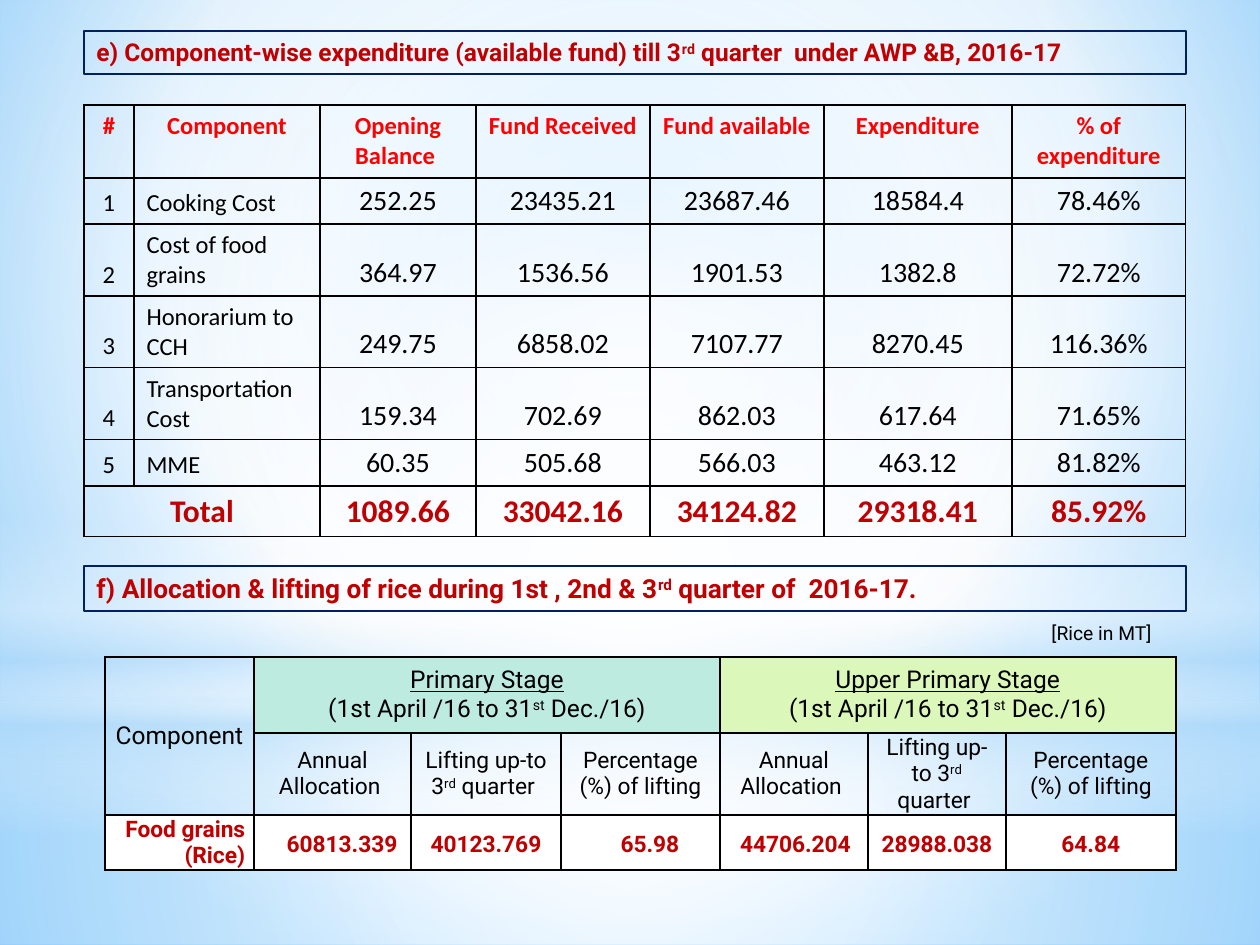
"""Build the slide on component-wise expenditure and rice lifting, 2016-17."""
import lxml.etree
import pptx
import pptx.dml.color
import pptx.enum.shapes
import pptx.enum.text
import pptx.oxml
import pptx.oxml.ns
import pptx.util

SHAPE = pptx.enum.shapes.MSO_SHAPE
ALIGN = pptx.enum.text.PP_ALIGN
ANCHOR = pptx.enum.text.MSO_ANCHOR
AUTO_SIZE = pptx.enum.text.MSO_AUTO_SIZE
COLORS = {
    "black": "000000", "white": "FFFFFF", "red": "FF0000", "dark_red": "C00000",
    "navy": "002060", "mint": "BEEBDF", "lime": "DCF7BA",
    "sky": "9ED5FF", "azure": "5BB9FF", "haze": "B4DCFA",
}
CENTER = (50, 50, 50, 50)


def px(value):
    return pptx.util.Emu(round(value * 914400 / 126))


def rgb(name):
    return pptx.dml.color.RGBColor.from_string(COLORS[name])


def gradient(stops, focus=None):
    namespace = pptx.oxml.ns.nsdecls("a")
    stop_xml = "".join(
        f'<a:gs pos="{position * 1000}"><a:srgbClr val="{COLORS[color]}">'
        f'<a:alpha val="{alpha * 1000}"/></a:srgbClr></a:gs>'
        for position, color, alpha in stops)
    if focus:
        sides = " ".join(f'{side}="{part * 1000}"' for side, part in zip("ltrb", focus))
        direction = f'<a:path path="circle"><a:fillToRect {sides}/></a:path>'
    else:
        direction = '<a:lin ang="5400000" scaled="0"/>'
    return pptx.oxml.parse_xml(
        f'<a:gradFill {namespace} rotWithShape="1"><a:gsLst>{stop_xml}</a:gsLst>{direction}</a:gradFill>')


class SlideBuilder:
    """Hold the style and the current slide, and draw each kind of element."""

    def __init__(self, slide, font="Roboto"):
        self.slide = slide
        self.font = font

    def swap_fill(self, parent, fill):
        solid = parent.find(pptx.oxml.ns.qn("a:solidFill"))
        parent.replace(solid, fill)

    def background(self, stops, focus):
        self.slide.background.fill.solid()
        properties = self.slide.element.find(".//" + pptx.oxml.ns.qn("p:bgPr"))
        self.swap_fill(properties, gradient(stops, focus))

    def glow(self, kind, top, height, stops, focus=None):
        shape = self.slide.shapes.add_shape(kind, px(0), px(top), px(1260), px(height))
        shape.shadow.inherit = False
        shape.line.fill.background()
        shape.fill.solid()
        self.swap_fill(shape.element.spPr, gradient(stops, focus))

    def add_text(self, frame, text, size, color="black", bold=False, align=ALIGN.LEFT,
                 font=None, indent=(0, 0), spacing=None):
        for index, content in enumerate(text.split("\n")):
            paragraph = frame.add_paragraph() if index else frame.paragraphs[0]
            paragraph.alignment = align
            if spacing:
                paragraph.line_spacing = spacing
            if any(indent):
                properties = paragraph._p.get_or_add_pPr()
                properties.set("marL", str(px(indent[0])))
                properties.set("indent", str(px(indent[1])))
            paragraph.font.name = font or self.font
            paragraph.font.size = pptx.util.Pt(size)
            paragraph.font.bold = bold
            paragraph.font.color.rgb = rgb(color)
            for number, line in enumerate(content.split("\v")):
                if number:
                    paragraph.add_line_break()
                self.add_runs(paragraph, line)

    def add_runs(self, paragraph, line):
        for index, piece in enumerate(line.strip("_").split("^")):
            run = paragraph.add_run()
            run.text = piece
            if line.startswith("_"):
                run.font.underline = True
            if index % 2:
                run._r.get_or_add_rPr().set("baseline", "30000")

    def heading(self, text, top, height, size):
        shape = self.slide.shapes.add_shape(SHAPE.RECTANGLE, px(84), px(top), px(1102), px(height))
        shape.shadow.inherit = False
        shape.fill.background()
        shape.line.color.rgb = rgb("navy")
        shape.line.width = pptx.util.Pt(0.75)
        frame = shape.text_frame
        frame.word_wrap = True
        frame.auto_size = AUTO_SIZE.SHAPE_TO_FIT_TEXT
        frame.vertical_anchor = ANCHOR.TOP
        self.add_text(frame, text, size, "dark_red", True, indent=(48, -48))

    def label(self, text, left, top, width, height, size):
        frame = self.slide.shapes.add_textbox(px(left), px(top), px(width), px(height)).text_frame
        frame.word_wrap = False
        frame.auto_size = AUTO_SIZE.SHAPE_TO_FIT_TEXT
        self.add_text(frame, text, size)

    def table(self, left, top, columns, rows):
        table = self.slide.shapes.add_table(
            len(rows), len(columns), px(left), px(top), px(sum(columns)), px(sum(rows))).table
        table.first_row = table.horz_banding = False
        for column, width in zip(table.columns, columns):
            column.width = px(width)
        for row, height in zip(table.rows, rows):
            row.height = px(height)
        for cell in table.iter_cells():
            cell.fill.background()
            self.border(cell)
        return table

    def border(self, cell):
        properties = cell._tc.get_or_add_tcPr()
        for index, side in enumerate("LRTB"):
            line = lxml.etree.Element(pptx.oxml.ns.qn(f"a:ln{side}"), w="12700")
            fill = lxml.etree.SubElement(line, pptx.oxml.ns.qn("a:solidFill"))
            lxml.etree.SubElement(fill, pptx.oxml.ns.qn("a:srgbClr"), val=COLORS["black"])
            properties.insert(index, line)

    def cell(self, cell, text, size, anchor=ANCHOR.MIDDLE, fill=None, tight=False, **style):
        cell.vertical_anchor = anchor
        if fill:
            cell.fill.solid()
            cell.fill.fore_color.rgb = rgb(fill)
        if tight:
            cell.margin_left = cell.margin_right = px(9)
            cell.margin_top = cell.margin_bottom = 0
        self.add_text(cell.text_frame, text, size, **{"align": ALIGN.CENTER, **style})


def draw_backdrop(builder):
    builder.background([(0, "sky", 100), (60, "white", 100), (100, "azure", 100)], (20, 10, 20, 60))
    builder.glow(SHAPE.RECTANGLE, 703, 242, [(0, "white", 91), (37, "white", 76), (100, "haze", 79)], CENTER)
    builder.glow(SHAPE.RECTANGLE, 0, 703, [(0, "white", 89), (48, "white", 62), (100, "haze", 79)], CENTER)
    builder.glow(SHAPE.RECTANGLE, 519, 315, [
        (0, "white", 0), (29, "white", 30), (45, "haze", 40),
        (55, "white", 26), (65, "haze", 60), (100, "white", 0)])
    builder.glow(SHAPE.OVAL, 220, 703, [(0, "white", 100), (56, "white", 0)], CENTER)


def draw_rice(builder):
    table = builder.table(105, 657, [149, 157, 150, 159, 148, 138, 170], [76, 82, 55])
    table.cell(0, 0).merge(table.cell(1, 0))
    builder.cell(table.cell(0, 0), "Component", 14, tight=True)
    for column, stage, fill in [(1, "Primary Stage", "mint"), (4, "Upper Primary Stage", "lime")]:
        table.cell(0, column).merge(table.cell(0, column + 2))
        builder.cell(table.cell(0, column), f"_{stage}_\v(1st April /16 to 31^st^ Dec./16)",
                     14, fill=fill, tight=True)
    allocation, lifting = "Annual Allocation ", "Lifting up-to 3^rd^ quarter "
    headers = [allocation, lifting, "Percentage (%) of lifting",
               allocation, lifting, "Percentage\n(%) of lifting"]
    values = [("60813.339", 19), ("40123.769", 0), ("65.98", 19),
              ("44706.204", 3), ("28988.038", 0), ("64.84", 0)]
    strong = {"fill": "white", "tight": True, "color": "dark_red", "bold": True}
    builder.cell(table.cell(2, 0), "Food grains (Rice)", 13, align=ALIGN.RIGHT, **strong)
    for column, (header, (value, indent)) in enumerate(zip(headers, values), 1):
        builder.cell(table.cell(1, column), header, 13, tight=True)
        builder.cell(table.cell(2, column), value, 13, indent=(0, indent), spacing=1.15, **strong)


def draw_expenditure(builder):
    headers = ["#", "Component", "Opening Balance ", "Fund Received", "Fund available ",
               "Expenditure", "% of expenditure"]
    rows = [
        ["1", "Cooking Cost", "252.25", "23435.21", "23687.46", "18584.4", "78.46%"],
        ["2", "Cost of food grains", "364.97", "1536.56", "1901.53", "1382.8", "72.72%"],
        ["3", "Honorarium to CCH", "249.75", "6858.02", "7107.77", "8270.45", "116.36%"],
        ["4", "Transportation Cost", "159.34", "702.69", "862.03", "617.64", "71.65%"],
        ["5", "MME", "60.35", "505.68", "566.03", "463.12", "81.82%"],
    ]
    totals = ["Total", None, "1089.66", "33042.16", "34124.82", "29318.41", "85.92%"]
    table = builder.table(84, 105, [50, 186, 156, 174, 174, 188, 174], [73, 46, 72, 71, 72, 46, 50])
    table.cell(6, 0).merge(table.cell(6, 1))
    for column, header in enumerate(headers):
        builder.cell(table.cell(0, column), header, 14, ANCHOR.TOP, font="Calibri", color="red", bold=True)
    for row, values in enumerate(rows, 1):
        for column, value in enumerate(values):
            builder.cell(table.cell(row, column), value, 14 if column < 2 else 16, ANCHOR.BOTTOM,
                         font="Calibri", align=ALIGN.LEFT if column == 1 else ALIGN.CENTER)
    for column, total in enumerate(totals):
        if total:
            builder.cell(table.cell(6, column), total, 18, ANCHOR.BOTTOM,
                         font="Calibri", color="dark_red", bold=True)


def main():
    presentation = pptx.Presentation()
    presentation.slide_width, presentation.slide_height = px(1260), px(945)
    builder = SlideBuilder(presentation.slides.add_slide(presentation.slide_layouts[6]))
    draw_backdrop(builder)
    builder.heading("e) Component-wise expenditure (available fund) till 3^rd^ quarter  under AWP &B, 2016-17",
                    31, 43, 14)
    builder.heading("f) Allocation & lifting of rice during 1st , 2nd & 3^rd^ quarter of  2016-17.", 566, 45, 15)
    draw_rice(builder)
    builder.label("[Rice in MT]", 1039, 615, 130, 37, 11)
    draw_expenditure(builder)
    presentation.save("out.pptx")


if __name__ == "__main__":
    main()
